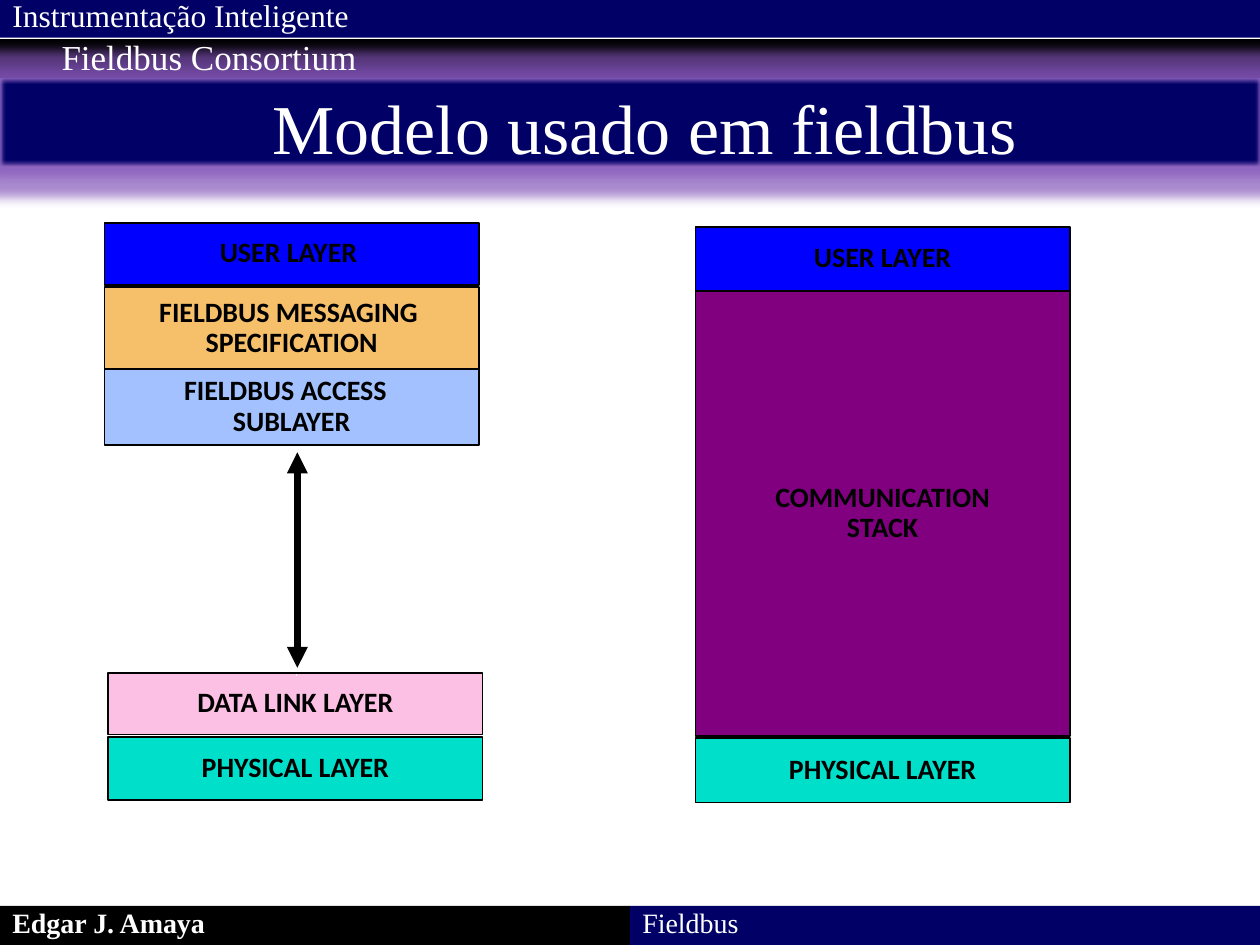
from lxml.etree import SubElement
from pptx import Presentation
from pptx.dml.color import RGBColor
from pptx.enum.shapes import MSO_CONNECTOR as Connector, MSO_SHAPE as Preset
from pptx.enum.text import MSO_ANCHOR as Anchor, PP_ALIGN as Align
from pptx.oxml.ns import qn
from pptx.util import Inches, Pt

BLACK = RGBColor(0x00, 0x00, 0x00)
WHITE = RGBColor(0xFF, 0xFF, 0xFF)
NAVY = RGBColor(0x00, 0x00, 0x66)
BLUE = RGBColor(0x00, 0x00, 0xFF)
TEAL = RGBColor(0x00, 0xDF, 0xCA)
PINK = RGBColor(0xFD, 0xC0, 0xE5)
SKY = RGBColor(0xA2, 0xC1, 0xFE)
ORANGE = RGBColor(0xF6, 0xBF, 0x69)
PURPLE = RGBColor(0x80, 0x00, 0x80)
GLOW = RGBColor(0x82, 0x53, 0xB9)
SERIF, SANS = "Times New Roman", "Calibri"

TITLE = "Modelo usado em fieldbus"
HEADINGS = [
    ("Instrumentação Inteligente", (0, -0.08, 6.33, 0.4), 18),
    ("Fieldbus Consortium", (0.39, 0.23, 5, 0.44), 20),
]
FOOTERS = [("Edgar J. Amaya", BLACK, True), ("Fieldbus", NAVY, False)]
LAYER_WIDTH = 2.97
STACKS = [
    (0.86, [
        (5.85, 0.5, TEAL, ["PHYSICAL LAYER"]),
        (5.34, 0.49, PINK, ["DATA LINK LAYER"]),
    ]),
    (0.83, [
        (2.93, 0.6, SKY, ["FIELDBUS ACCESS  ", "SUBLAYER"]),
        (2.28, 0.65, ORANGE, ["FIELDBUS MESSAGING ", "SPECIFICATION"]),
        (1.77, 0.49, BLUE, ["USER LAYER "]),
    ]),
    (5.52, [
        (1.8, 0.51, BLUE, ["USER LAYER"]),
        (5.86, 0.51, TEAL, ["PHYSICAL LAYER"]),
        (2.31, 3.53, PURPLE, ["COMMUNICATION", "STACK"]),
    ]),
]


def write(shape, lines, size, font_name, color, bold=False, align=Align.LEFT, spacing=None):
    frame = shape.text_frame
    frame.text = "\n".join(lines)
    for paragraph in frame.paragraphs:
        paragraph.alignment = align
        paragraph.line_spacing = spacing
        font = paragraph.font
        font.size, font.name, font.bold = Pt(size), font_name, bold
        font.color.rgb = color
    return frame


def add_box(slide, box, fill, outlined=False):
    shape = slide.shapes.add_shape(Preset.RECTANGLE, *map(Inches, box))
    shape.shadow.inherit = False
    shape.fill.solid()
    shape.fill.fore_color.rgb = fill
    if outlined:
        shape.line.color.rgb = BLACK
        shape.line.width = Pt(1)
    else:
        shape.line.fill.background()
    return shape


def add_glow(shape):
    effects = shape.element.spPr.find(qn("a:effectLst"))
    glow = SubElement(effects, qn("a:glow"), rad=str(Inches(0.17)))
    color = SubElement(glow, qn("a:srgbClr"), val=str(GLOW))
    SubElement(color, qn("a:alpha"), val="68000")
    SubElement(effects, qn("a:softEdge"), rad=str(Inches(0.02)))


def add_line(slide, start, end, color, width, arrows=False):
    line = slide.shapes.add_connector(Connector.STRAIGHT, *map(Inches, start + end))
    line.line.color.rgb = color
    line.line.width = Pt(width)
    if arrows:
        outline = line.element.spPr.find(qn("a:ln"))
        for end_name in ("a:headEnd", "a:tailEnd"):
            SubElement(outline, qn(end_name), type="triangle")
    SubElement(line.element.spPr, qn("a:effectLst"))


def add_layers(slide, left, layers):
    for top, height, fill, lines in layers:
        layer = add_box(slide, (left, top, LAYER_WIDTH, height), fill, outlined=True)
        frame = write(layer, lines, 16, SANS, BLACK, True, Align.CENTER, 0.9)
        frame.vertical_anchor = Anchor.MIDDLE
        frame.word_wrap = False


def main():
    presentation = Presentation()
    presentation.slide_width, presentation.slide_height = Inches(10), Inches(7.5)
    slide = presentation.slides.add_slide(presentation.slide_layouts[5])

    add_box(slide, (0, 0.31, 10, 0.31), BLACK)
    add_glow(add_box(slide, (0, 0.62, 10, 0.7), NAVY))
    for index, (text, fill, bold) in enumerate(FOOTERS):
        footer = add_box(slide, (5 * index, 7.19, 5, 0.31), fill)
        frame = write(footer, [text], 16, SERIF, WHITE, bold)
        frame.vertical_anchor = Anchor.BOTTOM
    add_box(slide, (0, 0, 10, 0.3), NAVY)

    for left, layers in STACKS[:2]:
        add_layers(slide, left, layers)
    add_line(slide, (2.36, 3.59), (2.36, 5.3), BLACK, 4, arrows=True)
    add_line(slide, (2.35, 5.36), (2.36, 5.36), WHITE, 1)
    add_layers(slide, *STACKS[2])

    title = slide.shapes.title
    title.left, title.top, title.width, title.height = map(Inches, (0.23, 0.62, 9.77, 0.77))
    write(title, [TITLE], 40, SERIF, WHITE, align=Align.CENTER).vertical_anchor = Anchor.TOP
    slide.shapes.element.append(title.element)

    for text, box, size in HEADINGS:
        heading = slide.shapes.add_textbox(*map(Inches, box))
        write(heading, [text], size, SERIF, WHITE).word_wrap = True

    presentation.save("out.pptx")


if __name__ == "__main__":
    main()
